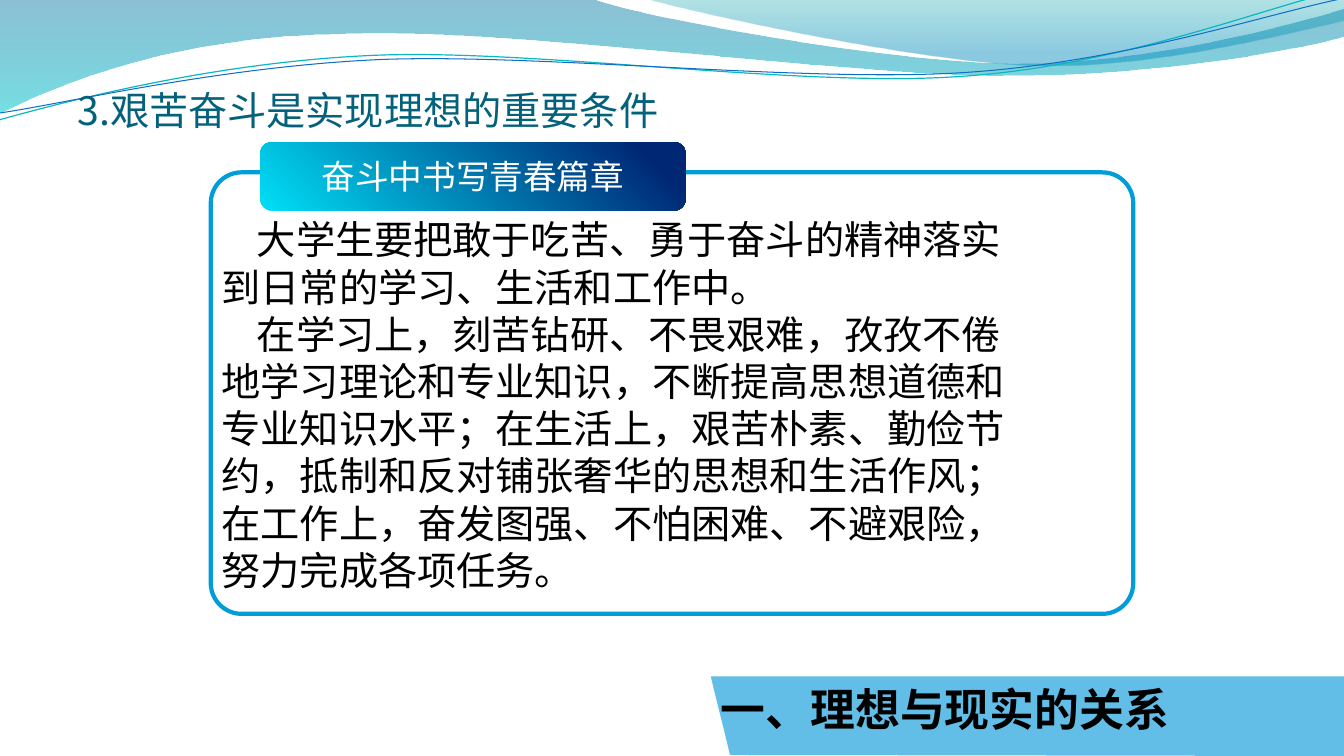
from math import cos, radians, sin

from lxml.etree import SubElement
from pptx import Presentation
from pptx.dml.color import RGBColor
from pptx.enum.shapes import MSO_SHAPE
from pptx.enum.text import MSO_ANCHOR, PP_ALIGN
from pptx.oxml.ns import qn
from pptx.util import Inches, Pt

FONT = "Noto Sans CJK SC"
COLORS = {
    "deep_blue": "0074A1", "aqua": "00C6CF", "teal": "00A1A9", "blue": "008BBF",
    "teal_line": "0AB8BF", "blue_line": "0F6FC6", "title": "04617B",
    "black": "000000", "white": "FFFFFF", "banner": "20A3DE", "frame": "009DD9",
    "tab_light": "00DFF6", "tab_dark": "002774",
}
STRAND_TILT = 357.3
STRAND_CENTER = (6.65, 0.56)

BROAD_WAVE = [
    (0, 0), (5.87, -0.01),
    (6.34, 0.17, 8.85, 0.63, 10.11, 0.63), (11.38, 0.63, 12.78, 0.26, 13.33, 0.09),
    (13.35, 0.36),
    (13.11, 0.44, 11.6, 0.76, 9.94, 0.75), (8.29, 0.75, 5.09, 0.28, 3.43, 0.34),
    (1.72, 0.36, 0.61, 0.83, -0.01, 1.13),
]
RIGHT_WAVE = [
    (6.39, -0.01), (6.79, 0.11, 9.09, 0.62, 10.25, 0.65),
    (11.41, 0.69, 12.82, 0.32, 13.33, 0.21), (13.33, 0),
]
TEAL_STRAND = [
    (-0.01, 1.19), (0.64, 1.01, 2.11, 0.62, 3.69, 0.55),
    (5.27, 0.48, 7.9, 0.87, 9.5, 0.76), (11.1, 0.66, 12.52, 0.08, 13.31, -0.1),
]
BLUE_STRAND = [
    (0, 1.12), (0.63, 1.03, 2.18, 0.66, 3.78, 0.59),
    (5.37, 0.53, 7.96, 0.82, 9.55, 0.72), (11.15, 0.62, 12.55, 0.14, 13.34, -0.02),
]
BANNER = [
    (7.05, 6.71), (13.33, 6.71), (13.33, 7.5), (7.24, 7.49),
    (7.18, 7.23, 7.11, 6.97, 7.05, 6.71),
]

PARAGRAPHS = [
    "大学生要把敢于吃苦、勇于奋斗的精神落实到日常的学习、生活和工作中。",
    "在学习上，刻苦钻研、不畏艰难，孜孜不倦地学习理论和专业知识，不断提高思想道德和"
    "专业知识水平；在生活上，艰苦朴素、勤俭节约，抵制和反对铺张奢华的思想和生活作风；"
    "在工作上，奋发图强、不怕困难、不避艰险，努力完成各项任务。",
]


def rgb(name):
    return RGBColor.from_string(COLORS[name])


def pairs(segment):
    return list(zip(segment[::2], segment[1::2]))


def level(segment):
    turn = radians(360 - STRAND_TILT)
    center_x, center_y = STRAND_CENTER
    leveled = []
    for x, y in pairs(segment):
        dx, dy = x - center_x, y - center_y
        leveled += [center_x + dx * cos(turn) - dy * sin(turn),
                    center_y + dx * sin(turn) + dy * cos(turn)]
    return tuple(leveled)


def bend(outline, segments):
    edges = list(outline._element.iter(qn("a:lnTo")))
    for edge, segment in zip(edges, segments[1:]):
        if len(segment) == 2:
            continue
        edge.remove(edge[0])
        for x, y in pairs(segment):
            SubElement(edge, qn("a:pt"), x=str(Inches(x) - outline.left),
                       y=str(Inches(y) - outline.top))
        edge.tag = qn("a:cubicBezTo")


def add_outline(slide, segments, closed=True):
    start, *corners = [(Inches(s[-2]), Inches(s[-1])) for s in segments]
    builder = slide.shapes.build_freeform(*start, scale=1.0)
    builder.add_line_segments(corners, close=closed)
    outline = builder.convert_to_shape()
    bend(outline, segments)
    outline.shadow.inherit = False
    outline.line.fill.background()
    return outline


def add_strand(slide, segments, color, width):
    strand = add_outline(slide, [level(segment) for segment in segments], closed=False)
    strand.rotation = STRAND_TILT
    strand.fill.background()
    strand.line.color.rgb = rgb(color)
    strand.line.width = Pt(width)


def set_opacity(color_element, percent):
    SubElement(color_element, qn("a:alpha"), val=str(percent * 1000))


def fill_gradient(shape, stops, angle):
    shape.fill.gradient()
    gradient = shape.fill._xPr.find(qn("a:gradFill"))
    stop_list = gradient.find(qn("a:gsLst"))
    for old_stop in list(stop_list):
        stop_list.remove(old_stop)
    for position, color, opacity in stops:
        stop = SubElement(stop_list, qn("a:gs"), pos=str(position * 1000))
        tint = SubElement(stop, qn("a:srgbClr"), val=COLORS[color])
        if opacity < 100:
            set_opacity(tint, opacity)
    direction = gradient.find(qn("a:lin"))
    direction.set("ang", str(angle * 60000))
    direction.set("scaled", "0")


def add_wave(slide, segments, stops):
    fill_gradient(add_outline(slide, segments), stops, 90)


def write(paragraph, text, size, color, bold=False):
    run = paragraph.add_run()
    run.text = text
    run.font.size = Pt(size)
    run.font.name = FONT
    run.font.bold = bold
    run.font.color.rgb = rgb(color)
    SubElement(run.font._element, qn("a:ea"), typeface=FONT)


def add_text_area(slide, left, top, width, height, anchor):
    area = slide.shapes.add_textbox(Inches(left), Inches(top), Inches(width), Inches(height))
    area.text_frame.word_wrap = True
    area.text_frame.vertical_anchor = anchor
    return area.text_frame


def add_title(slide):
    title = add_text_area(slide, 0.67, 0.77, 12, 0.64, MSO_ANCHOR.MIDDLE)
    write(title.paragraphs[0], "3.艰苦奋斗是实现理想的重要条件", 28, "title")


def add_body(slide):
    body = add_text_area(slide, 2.1, 2.09, 8.1, 3.9, MSO_ANCHOR.TOP)
    for index, text in enumerate(PARAGRAPHS):
        paragraph = body.add_paragraph() if index else body.paragraphs[0]
        paragraph.line_spacing = Pt(33.7)
        paragraph._p.get_or_add_pPr().set("indent", str(Inches(0.35)))
        write(paragraph, text, 28, "black")


def add_banner(slide):
    banner = add_outline(slide, BANNER, closed=False)
    banner.fill.solid()
    banner.fill.fore_color.rgb = rgb("banner")
    set_opacity(banner.fill._xPr.find(qn("a:solidFill"))[0], 70)
    heading = banner.text_frame
    heading.word_wrap = True
    heading.vertical_anchor = MSO_ANCHOR.TOP
    heading.paragraphs[0].alignment = PP_ALIGN.LEFT
    write(heading.paragraphs[0], "一、理想与现实的关系", 32, "black", bold=True)


def add_rounded(slide, left, top, width, height, rounding):
    rounded = slide.shapes.add_shape(
        MSO_SHAPE.ROUNDED_RECTANGLE, Inches(left), Inches(top), Inches(width), Inches(height))
    rounded.adjustments[0] = rounding
    rounded.shadow.inherit = False
    return rounded


def add_frame(slide):
    frame = add_rounded(slide, 2.09, 1.71, 9.15, 4.38, 0.07)
    frame.fill.background()
    frame.line.color.rgb = rgb("frame")
    frame.line.width = Pt(3)


def add_tab(slide):
    tab = add_rounded(slide, 2.58, 1.41, 4.22, 0.68, 0.17)
    fill_gradient(tab, [(0, "tab_light", 100), (90, "tab_dark", 100), (100, "tab_dark", 100)], 315)
    tab.line.fill.background()
    tab.text_frame.vertical_anchor = MSO_ANCHOR.MIDDLE
    label = tab.text_frame.paragraphs[0]
    label.alignment = PP_ALIGN.CENTER
    write(label, "奋斗中书写青春篇章", 24, "white")


def main():
    presentation = Presentation()
    presentation.slide_width = Inches(13.33)
    presentation.slide_height = Inches(7.5)
    slide = presentation.slides.add_slide(presentation.slide_layouts[6])
    add_wave(slide, BROAD_WAVE, [(0, "deep_blue", 45), (100, "aqua", 55)])
    add_wave(slide, RIGHT_WAVE, [(0, "teal", 30), (80, "blue", 45)])
    add_strand(slide, TEAL_STRAND, "teal_line", 0.85)
    add_strand(slide, BLUE_STRAND, "blue_line", 0.75)
    add_title(slide)
    add_body(slide)
    add_banner(slide)
    add_frame(slide)
    add_tab(slide)
    presentation.save("out.pptx")


if __name__ == "__main__":
    main()
